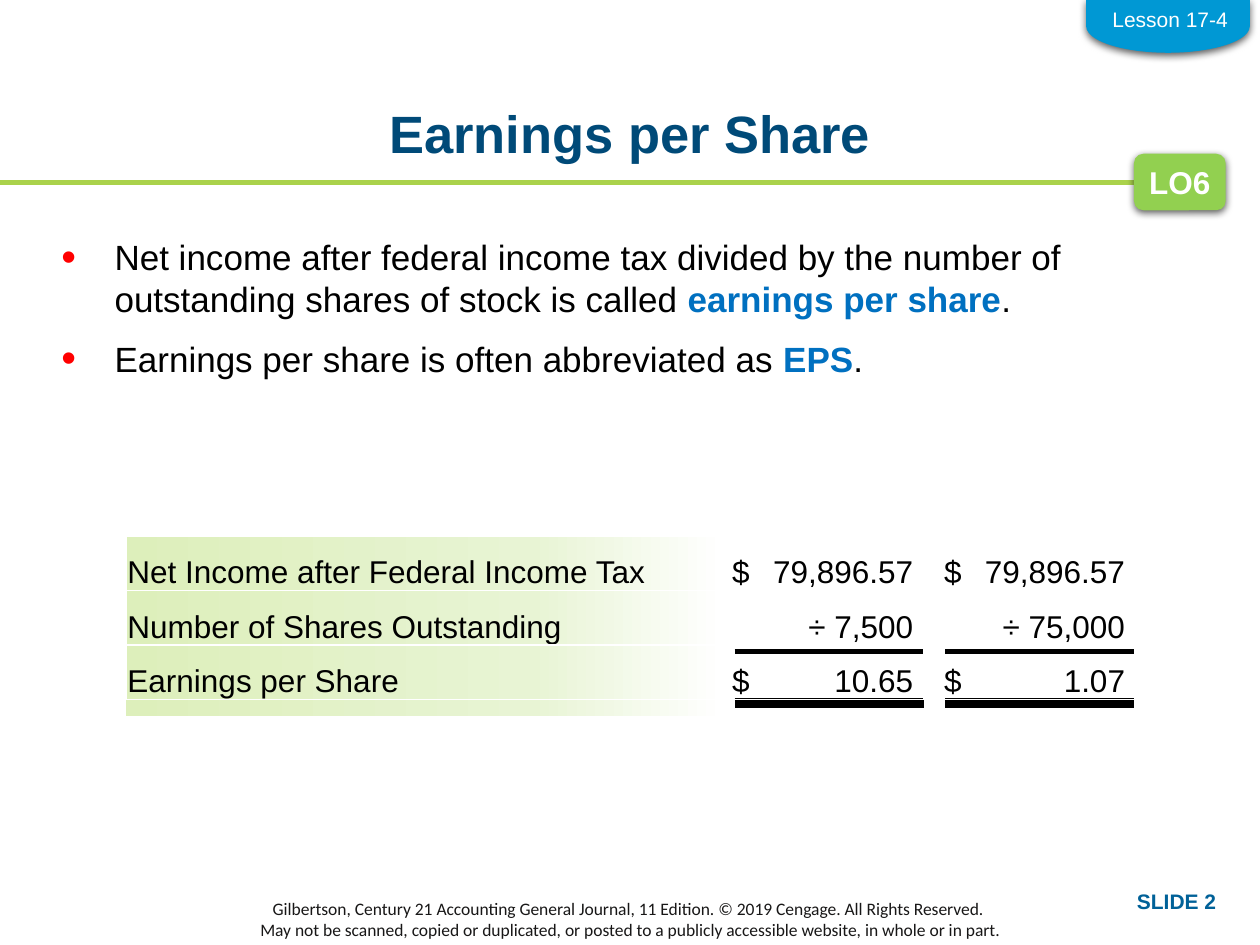
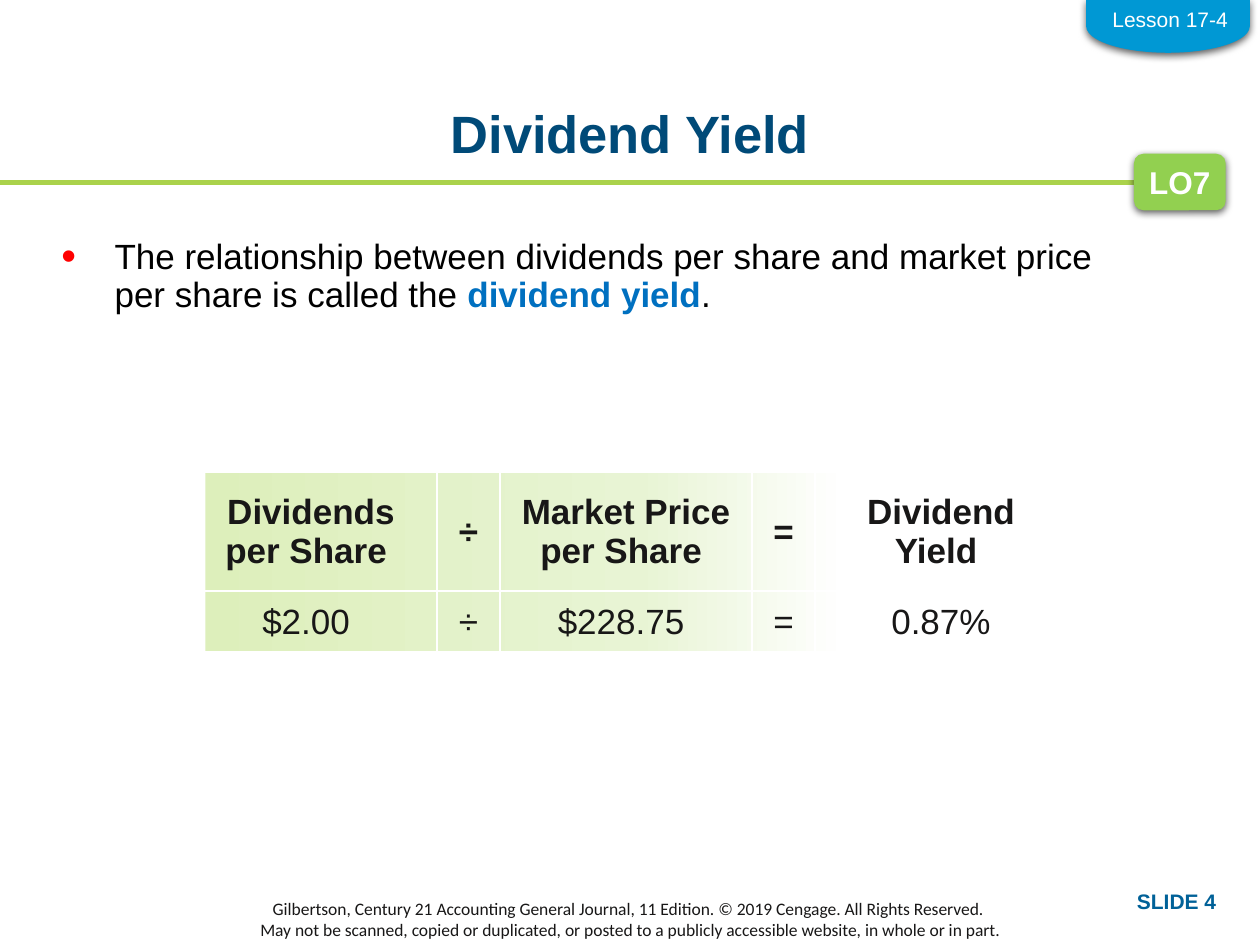
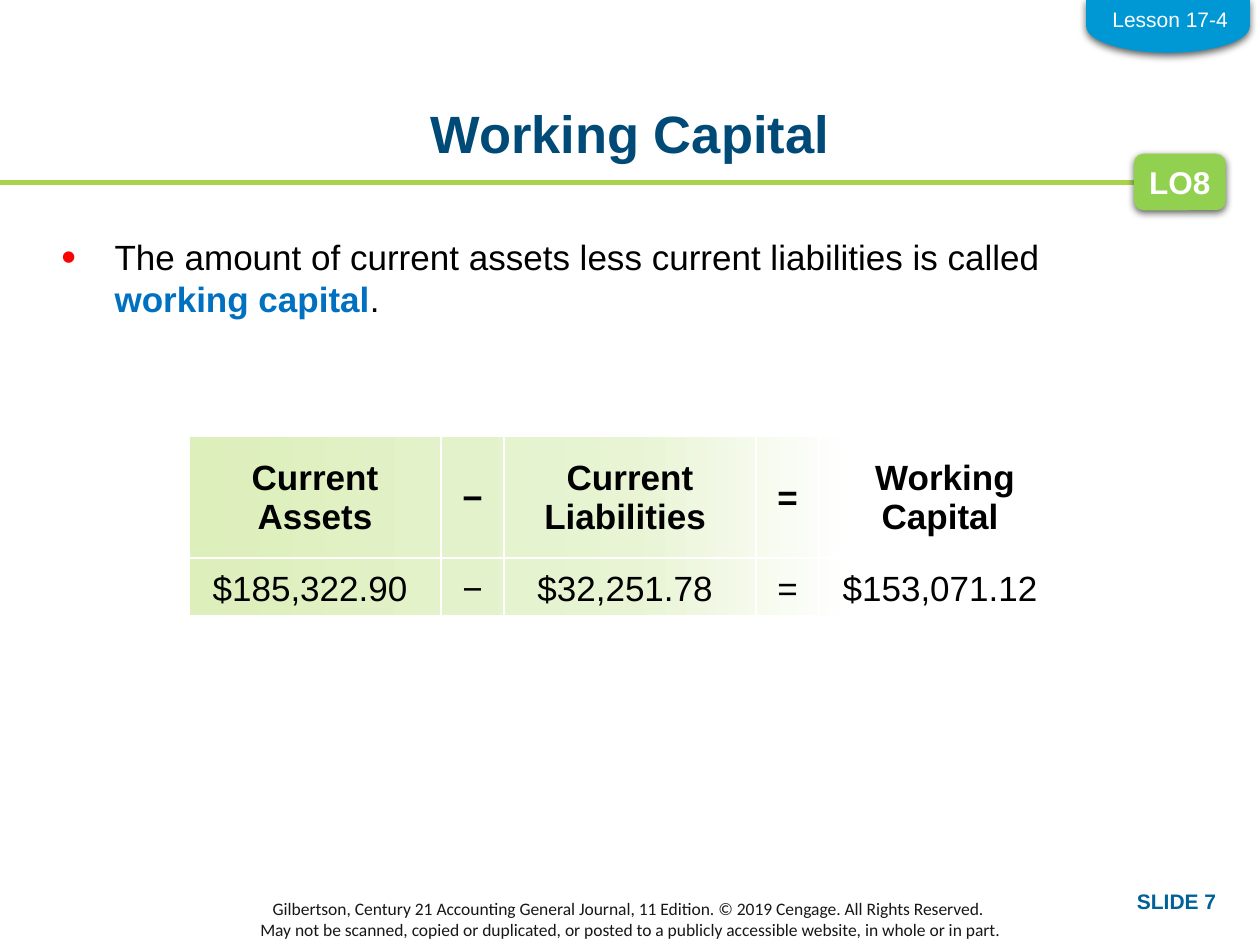
from copy import deepcopy

from lxml import etree
from pptx import Presentation
from pptx import util as u
from pptx.dml.color import RGBColor
from pptx.enum import shapes, text
from pptx.oxml import ns

# Colours
NAVY = RGBColor(0x00, 0x4A, 0x78)
BLUE = RGBColor(0x00, 0x61, 0x98)
SKY = RGBColor(0x00, 0x98, 0xD4)
TERM_BLUE = RGBColor(0x00, 0x70, 0xC0)
LIME = RGBColor(0xAA, 0xD2, 0x4B)
GREEN = RGBColor(0x92, 0xD0, 0x50)
BLACK = RGBColor(0, 0, 0)
INK = RGBColor(0x18, 0x17, 0x17)
WHITE = RGBColor(0xFF, 0xFF, 0xFF)
FADE = [(0, RGBColor(0xDD, 0xEF, 0xBB)),
        (0.5, RGBColor(0xE8, 0xF4, 0xD4)),
        (0.74, WHITE)]

LESSON = "Lesson 17-4"
COPYRIGHT = [
    "Gilbertson, Century 21 Accounting General Journal, 11 Edition. "
    "© 2019 Cengage. All Rights Reserved. ",
    "May not be scanned, copied or duplicated, or posted to a publicly "
    "accessible website, in whole or in part.",
]
CENTER, RIGHT = text.PP_ALIGN.CENTER, text.PP_ALIGN.RIGHT
MIDDLE, BOTTOM = text.MSO_ANCHOR.MIDDLE, text.MSO_ANCHOR.BOTTOM
EQUATION_COLUMNS = [5.08, 1.27, 5.08, 1.27, 5.08]


def sub(parent, tag, **attributes):
    return etree.SubElement(parent, ns.qn(tag), attributes)


class Deck:
    """Holds the shared style and the slide being built."""

    font = "Arial"

    def __init__(self):
        self.prs = Presentation()
        self.prs.slide_width, self.prs.slide_height = u.Cm(25.4), u.Cm(19.05)
        self.slide = None

    # Text
    def run(self, paragraph, words, size, color, bold=False, font=None):
        for i, line in enumerate(words.split("\n")):
            if i:
                paragraph.add_line_break()
            run = paragraph.add_run()
            run.text = line
            run.font.name = font or self.font
            run.font.size = u.Pt(size)
            run.font.bold = bold
            run.font.color.rgb = color

    def frame(self, shape, wrap=True, margin=None):
        frame = shape.text_frame
        frame.word_wrap = wrap
        frame.auto_size = text.MSO_AUTO_SIZE.NONE
        if margin is not None:
            frame.margin_left = frame.margin_right = u.Cm(margin)
            frame.margin_top = frame.margin_bottom = u.Cm(margin)
        return frame

    def box(self, left, top, width, height, wrap=True, margin=None):
        box = self.slide.shapes.add_textbox(
            u.Cm(left), u.Cm(top), u.Cm(width), u.Cm(height))
        return self.frame(box, wrap, margin)

    def label(self, place, words, color, align, bold=False, wrap=True):
        paragraph = self.box(*place, wrap=wrap).paragraphs[0]
        paragraph.alignment = align
        self.run(paragraph, words, 12, color, bold)

    def title(self, words):
        title = self.slide.shapes.title
        title.left, title.top = u.Cm(1.75), u.Cm(2.18)
        title.width, title.height = u.Cm(21.9), u.Cm(1.88)
        frame = self.frame(title, margin=0)
        frame.vertical_anchor = text.MSO_ANCHOR.TOP
        paragraph = frame.paragraphs[0]
        paragraph.alignment = CENTER
        paragraph.line_spacing = 0.9
        self.run(paragraph, words, 30, NAVY, True)

    def bullets(self, points, top=4.75, height=4.78, spacing=None):
        """Each point is (lead-in, key term); a full stop ends it."""
        frame = self.box(1.24, top, 22.33, height, margin=0)
        for i, (lead, term) in enumerate(points):
            paragraph = frame.add_paragraph() if i else frame.paragraphs[0]
            p_pr = paragraph._p.get_or_add_pPr()
            p_pr.set("marL", str(u.Cm(1.07)))
            p_pr.set("indent", str(-u.Cm(1.07)))
            sub(sub(p_pr, "a:buClr"), "a:srgbClr", val="FF0000")
            sub(p_pr, "a:buSzPct", val="120000")
            sub(p_pr, "a:buFont", typeface=self.font)
            sub(p_pr, "a:buChar", char="•")
            paragraph.line_spacing = spacing
            if i:
                paragraph.space_before = u.Pt(10)
            self.run(paragraph, lead, 20, BLACK)
            self.run(paragraph, term, 20, TERM_BLUE, True)
            self.run(paragraph, ".", 20, BLACK)

    # Shapes and lines
    def shape(self, kind, left, top, width, height, color=None, shadow=False):
        shape = self.slide.shapes.add_shape(
            kind, u.Cm(left), u.Cm(top), u.Cm(width), u.Cm(height))
        shape.line.fill.background()
        shape.shadow.inherit = False
        if color is not None:
            shape.fill.solid()
            shape.fill.fore_color.rgb = color
        if shadow:
            effects = shape._element.spPr.find(ns.qn("a:effectLst"))
            outer = sub(effects, "a:outerShdw", blurRad="57150", dist="19050",
                        dir="5400000", algn="ctr", rotWithShape="0")
            shade = sub(outer, "a:srgbClr", val="000000")
            sub(shade, "a:alpha", val="63000")
        return shape

    def fade_panel(self, left, top, width):
        panel = self.shape(shapes.MSO_SHAPE.RECTANGLE, left, top, width, 3.61)
        panel.fill.gradient()
        panel.fill.gradient_angle = 0
        stop_list = panel._element.spPr.find(".//" + ns.qn("a:gsLst"))
        stop_list.append(deepcopy(stop_list[0]))
        for stop, (position, color) in zip(panel.fill.gradient_stops, FADE):
            stop.position = position
            stop.color.rgb = color

    def rule(self, left, right, y, color, weight):
        line = self.slide.shapes.add_connector(
            shapes.MSO_CONNECTOR.STRAIGHT,
            u.Cm(left), u.Cm(y), u.Cm(right), u.Cm(y))
        line.line.color.rgb = color
        line.line.width = u.Pt(weight)
        sub(line._element.spPr, "a:effectLst")

    # Tables
    def table(self, left, top, columns, row_height, rows, size, color,
              bold=False, align=None, anchor=MIDDLE, tab=None):
        table = self.slide.shapes.add_table(
            len(rows), len(columns), u.Cm(left), u.Cm(top),
            u.Cm(sum(columns)), u.Cm(row_height * len(rows))).table
        table.first_row = table.horz_banding = False
        for column, width in zip(table.columns, columns):
            column.width = u.Cm(width)
        for r, row in enumerate(rows):
            for c, words in enumerate(row):
                cell = table.cell(r, c)
                cell.fill.background()
                cell.vertical_anchor = anchor
                cell.margin_left = cell.margin_right = u.Cm(0.03)
                cell.margin_top, cell.margin_bottom = u.Cm(0.03), 0
                if not words:
                    continue
                paragraph = cell.text_frame.paragraphs[0]
                paragraph.alignment = align
                if "\t" in words:
                    tabs = sub(paragraph._p.get_or_add_pPr(), "a:tabLst")
                    sub(tabs, "a:tab", pos=str(u.Cm(tab)), algn="r")
                self.run(paragraph, words, size, color, bold)

    def equation(self, left, top, heights, terms, values, color):
        """A bold row of terms above the row of their values."""
        head, body = heights
        self.table(left, top, EQUATION_COLUMNS, head, [terms], 20, color,
                   bold=True, align=CENTER)
        self.table(left, top + head, EQUATION_COLUMNS, body, [values], 20,
                   color, align=CENTER)

    # What every slide shares
    def new_slide(self, title, objective, number):
        self.slide = self.prs.slides.add_slide(self.prs.slide_layouts[5])
        self.rule(0, 24.13, 3.68, LIME, 3)
        self.title(title)

        footer = self.box(0, 18.14, 25.4, 0.76)
        footer.vertical_anchor = MIDDLE
        for i, line in enumerate(COPYRIGHT):
            paragraph = footer.add_paragraph() if i else footer.paragraphs[0]
            paragraph.alignment = CENTER
            self.run(paragraph, line, 10, INK, font="Calibri")
        self.label((19.69, 17.78, 5.08, 0.76), f"SLIDE {number}", BLUE,
                   RIGHT, bold=True)

        badge = self.shape(shapes.MSO_SHAPE.ROUNDED_RECTANGLE,
                           22.86, 3.1, 1.85, 1.14, GREEN, shadow=True)
        frame = self.frame(badge, wrap=False)
        frame.vertical_anchor = MIDDLE
        frame.paragraphs[0].alignment = CENTER
        self.run(frame.paragraphs[0], objective, 18, WHITE, True)

        lesson_tab = self.shape(shapes.MSO_SHAPE.FLOWCHART_DELAY,
                                23.01, -1.12, 1.07, 3.3, SKY, shadow=True)
        lesson_tab.rotation = 90
        self.label((22.17, 0, 2.84, 0.76), LESSON, WHITE, CENTER, wrap=False)


def earnings_per_share(deck):
    deck.new_slide("Earnings per Share", "LO6", 2)
    deck.bullets([
        ("Net income after federal income tax divided by the number of "
         "outstanding shares of stock is called ", "earnings per share"),
        ("Earnings per share is often abbreviated as ", "EPS"),
    ])
    deck.fade_panel(2.54, 10.82, 16.31)
    # Single rule above the result, heavy rule below it
    for y, weight in ((13.13, 3), (14.17, 6)):
        for left in (14.81, 19.05):
            deck.rule(left, left + 3.81, y, BLACK, weight)
    deck.table(2.54, 10.8, [11.89, 0.3, 3.89, 0.38, 3.89], 1.1, [
        ["Net Income after Federal Income Tax", "", "$\t79,896.57", "",
         "$\t79,896.57"],
        ["Number of Shares Outstanding", "", "\t÷ 7,500", "", "\t÷ 75,000"],
        ["Earnings per Share", "", "$\t10.65", "", "$\t1.07"],
    ], 18, BLACK, anchor=BOTTOM, tab=3.65)


def dividend_yield(deck):
    deck.new_slide("Dividend Yield", "LO7", 4)
    deck.bullets([
        ("The relationship between dividends per share and market price \n"
         "per share is called the ", "dividend yield"),
    ], top=4.83, height=2.87, spacing=0.9)
    deck.fade_panel(4.14, 9.52, 17.45)
    deck.equation(
        3.73, 9.52, (2.39, 1.22),
        ["Dividends\nper Share ", "÷", "Market Price per Share ", "=",
         "Dividend\nYield "],
        ["$2.00 ", "÷", "$228.75 ", "=", "0.87%"], INK)


def working_capital(deck):
    deck.new_slide("Working Capital", "LO8", 7)
    deck.bullets([
        ("The amount of current assets less current liabilities is called ",
         "working capital"),
    ], height=10.36)
    deck.fade_panel(3.81, 8.79, 17.98)
    deck.equation(
        3.81, 8.79, (2.46, 1.24),
        ["Current\nAssets", "−", "Current Liabilities ", "=",
         "Working Capital "],
        ["$185,322.90 ", "−", "$32,251.78 ", "=", "$153,071.12 "], BLACK)


def main():
    deck = Deck()
    earnings_per_share(deck)
    dividend_yield(deck)
    working_capital(deck)
    deck.prs.save("out.pptx")


if __name__ == "__main__":
    main()
